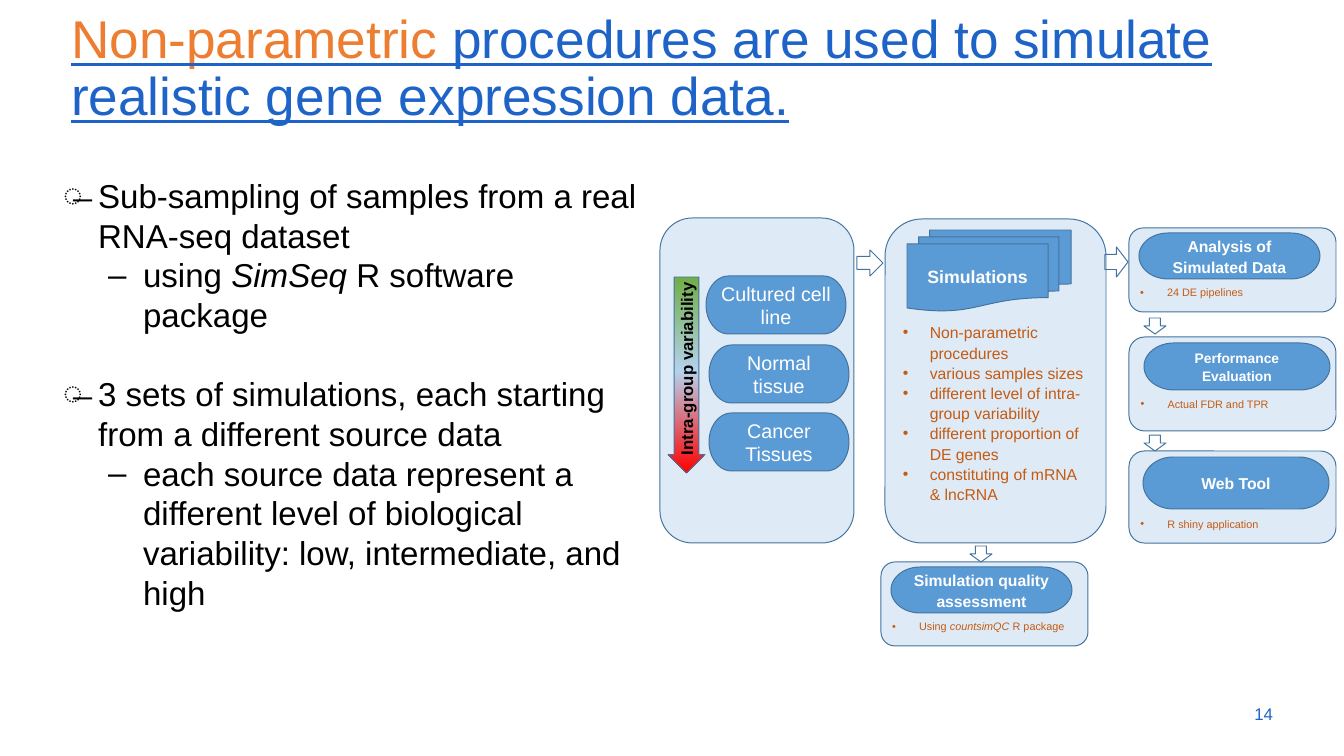
from lxml import etree
from copy import deepcopy
from pptx import Presentation
from pptx.dml.color import RGBColor
from pptx.enum.shapes import MSO_SHAPE as SHAPE
from pptx.enum.text import MSO_ANCHOR as ANCHOR, MSO_AUTO_SIZE as AUTO, PP_ALIGN as ALIGN
from pptx.oxml.ns import qn
from pptx.util import Pt

PX = 12900  # EMU per px
W, H = 1344, 756
FONT = "Arial"
C = {"orange": "ED7D31", "blue": "1E64C8", "black": "000000", "white": "FFFFFF",
     "pale": "DEEBF7", "fill": "5B9BD5", "line": "43739E", "rust": "C55A11"}

# Each run is (text, style); style may hold b, i or u
TITLE = [("Non-parametric", "u", "orange"),
         (" procedures are used to simulate realistic gene expression data.", "u", "blue")]
# level, points before, runs
BODY = [
    (0, 0, [("Sub-sampling of samples from a real RNA-seq dataset", "")]),
    (1, 0, [("using ", ""), ("SimSeq", "i"), (" R software package", "")]),
    (0, 40, [("3 sets of simulations, each starting from a different source data", "")]),
    (1, 0, [("each source data represent a different level of biological "
             "variability: low, intermediate, and high", "")]),
]
LEVELS = [("̶", 91), ("‒", 136)]  # bullet, left margin
BODY_HANG, PANEL_HANG = 35, 27

SIM_ITEMS = [[(text, "")] for text in (
    "Non-parametric procedures", "various samples sizes",
    "different level of intra-group variability",
    "different proportion of DE genes", "constituting of mRNA & lncRNA")]
# box, space above the list, text size, items
PANELS = [
    ((660, 218, 194, 325), 0, 16, []),
    ((885, 219, 221, 324), 92, 16, SIM_ITEMS),
    ((1129, 228, 207, 84), 53, 11, [[("24 DE pipelines", "")]]),
    ((1129, 337, 207, 94), 55, 11, [[("Actual FDR and TPR", "")]]),
    ((1129, 451, 207, 92), 61, 11, [[("R shiny application", "")]]),
    ((881, 562, 207, 84), 53, 11,
     [[("Using ", ""), ("countsimQC", "i"), (" R package", "")]]),
]
# shape, box, text, size, style, line spacing
PILL = SHAPE.FLOWCHART_TERMINATOR
LABELS = [
    (SHAPE.FLOWCHART_MULTIDOCUMENT, (907, 230, 164, 81), "Simulations", 18, "b", 1.07),
    (PILL, (706, 276, 140, 58), "Cultured cell line", 20, "", 1.0),
    (PILL, (709, 345, 140, 58), "Normal tissue", 20, "", 1.0),
    (PILL, (709, 413, 140, 58), "Cancer Tissues", 20, "", 1.0),
    (PILL, (1139, 233, 181, 46), "Analysis of Simulated Data", 16, "b", 1.07),
    (PILL, (1144, 343, 186, 47), "Performance Evaluation", 14, "b", 1.07),
    (PILL, (1143, 457, 186, 52), "Web Tool", 16, "b", 1.07),
    (PILL, (891, 567, 181, 46), "Simulation quality assessment", 16, "b", 1.07),
]
ARROWS = [
    (SHAPE.RIGHT_ARROW, (857, 250, 26, 26)),
    (SHAPE.RIGHT_ARROW, (1105, 247, 23, 30)),
    (SHAPE.DOWN_ARROW, (1144, 318, 22, 16)),
    (SHAPE.DOWN_ARROW, (1144, 435, 22, 16)),
    (SHAPE.DOWN_ARROW, (970, 546, 22, 16)),
]
VARIABILITY = ((668, 277, 37, 196), "Intra-group variability")
GRADIENT = [(0, "70AD47"), (0.48, "B5D2EC"), (1, "FF0000")]


def rgb(name):
    return RGBColor.from_string(C[name])


def emu(box):
    return [v * PX for v in box]


def add_run(p, text, size, color, style=""):
    r = p.add_run()
    r.text = text
    f = r.font
    f.name, f.size, f.color.rgb = FONT, Pt(size), rgb(color)
    f.bold, f.italic, f.underline = "b" in style, "i" in style, "u" in style
    return r


def color_underline(r, color):
    line_fill = etree.Element(qn("a:uFill"))
    solid = etree.SubElement(line_fill, qn("a:solidFill"))
    etree.SubElement(solid, qn("a:srgbClr")).set("val", C[color])
    r._r.rPr.find(qn("a:latin")).addprevious(line_fill)


def start_paragraph(tf, first, align=ALIGN.LEFT, spacing=1.0, before=0):
    p = tf.paragraphs[0] if first else tf.add_paragraph()
    p.alignment, p.line_spacing = align, spacing
    p.space_before, p.space_after = Pt(before), Pt(0)
    return p


def add_bullet(p, char, left, hang):
    pPr = p._p.get_or_add_pPr()
    pPr.set("marL", str(left * PX))
    pPr.set("indent", str(-hang * PX))
    etree.SubElement(pPr, qn("a:buFont")).set("typeface", FONT)
    etree.SubElement(pPr, qn("a:buChar")).set("char", char)


def place(sp, box, anchor):
    sp.left, sp.top, sp.width, sp.height = emu(box)
    tf = sp.text_frame
    tf.word_wrap, tf.auto_size, tf.vertical_anchor = True, AUTO.NONE, anchor
    return tf


def add_outlined(slide, kind, box, fill=None):
    sp = slide.shapes.add_shape(kind, *emu(box))
    sp.shadow.inherit = False
    sp.line.color.rgb, sp.line.width = rgb("line"), Pt(1)
    if fill:
        sp.fill.solid()
        sp.fill.fore_color.rgb = rgb(fill)
    else:
        sp.fill.background()
    return sp


def add_text(slide):
    tf = place(slide.shapes.title, (64, 10, 1218, 121), ANCHOR.BOTTOM)
    p = start_paragraph(tf, True, spacing=0.9)
    for text, style, color in TITLE:
        color_underline(add_run(p, text, 54, color, style), "blue")

    tf = place(slide.placeholders[1], (0, 172, 652, 455), ANCHOR.TOP)
    for n, (level, before, runs) in enumerate(BODY):
        p = start_paragraph(tf, n == 0, before=before)
        p.level = level
        char, left = LEVELS[level]
        add_bullet(p, char, left, BODY_HANG)
        for text, style in runs:
            add_run(p, text, 33.6, "black", style)

    box = (1208, 694, 72, 40)
    tf = place(slide.shapes.add_textbox(*emu(box)), box, ANCHOR.MIDDLE)
    add_run(start_paragraph(tf, True, ALIGN.RIGHT), "14", 17.1, "blue")


def add_panels(slide):
    for box, inset, size, items in PANELS:
        sp = add_outlined(slide, SHAPE.ROUNDED_RECTANGLE, box, "pale")
        tf = place(sp, box, ANCHOR.TOP)
        tf.margin_top, tf.margin_bottom = inset * PX, 0
        for n, runs in enumerate(items):
            p = start_paragraph(tf, n == 0, spacing=1.07)
            add_bullet(p, "•", PANEL_HANG, PANEL_HANG)
            for text, style in runs:
                add_run(p, text, size, "rust", style)


def add_labels(slide):
    for kind, box, text, size, style, spacing in LABELS:
        tf = place(add_outlined(slide, kind, box, "fill"), box, ANCHOR.MIDDLE)
        add_run(start_paragraph(tf, True, ALIGN.CENTER, spacing), text, size, "white", style)


def add_variability_arrow(slide):
    box, text = VARIABILITY
    sp = add_outlined(slide, SHAPE.DOWN_ARROW, box)
    sp.adjustments[0], sp.adjustments[1] = 0.667, 0.5
    sp.fill.gradient()
    sp.fill.gradient_angle = 270
    last = sp.fill.gradient_stops[1]._gs
    last.addnext(deepcopy(last))
    for stop, (position, color) in zip(sp.fill.gradient_stops, GRADIENT):
        stop.position = position
        stop.color.rgb = RGBColor.from_string(color)
    tf = place(sp, box, ANCHOR.MIDDLE)
    tf.margin_left = tf.margin_right = tf.margin_top = tf.margin_bottom = 0
    tf._txBody.bodyPr.set("vert", "vert270")
    add_run(start_paragraph(tf, True, ALIGN.CENTER), text, 17, "black", "b")


def main():
    prs = Presentation()
    prs.slide_width, prs.slide_height = W * PX, H * PX
    slide = prs.slides.add_slide(prs.slide_layouts[1])
    add_text(slide)
    add_panels(slide)
    for kind, box in ARROWS:
        add_outlined(slide, kind, box)
    add_labels(slide)
    add_variability_arrow(slide)
    prs.save("out.pptx")


if __name__ == "__main__":
    main()
